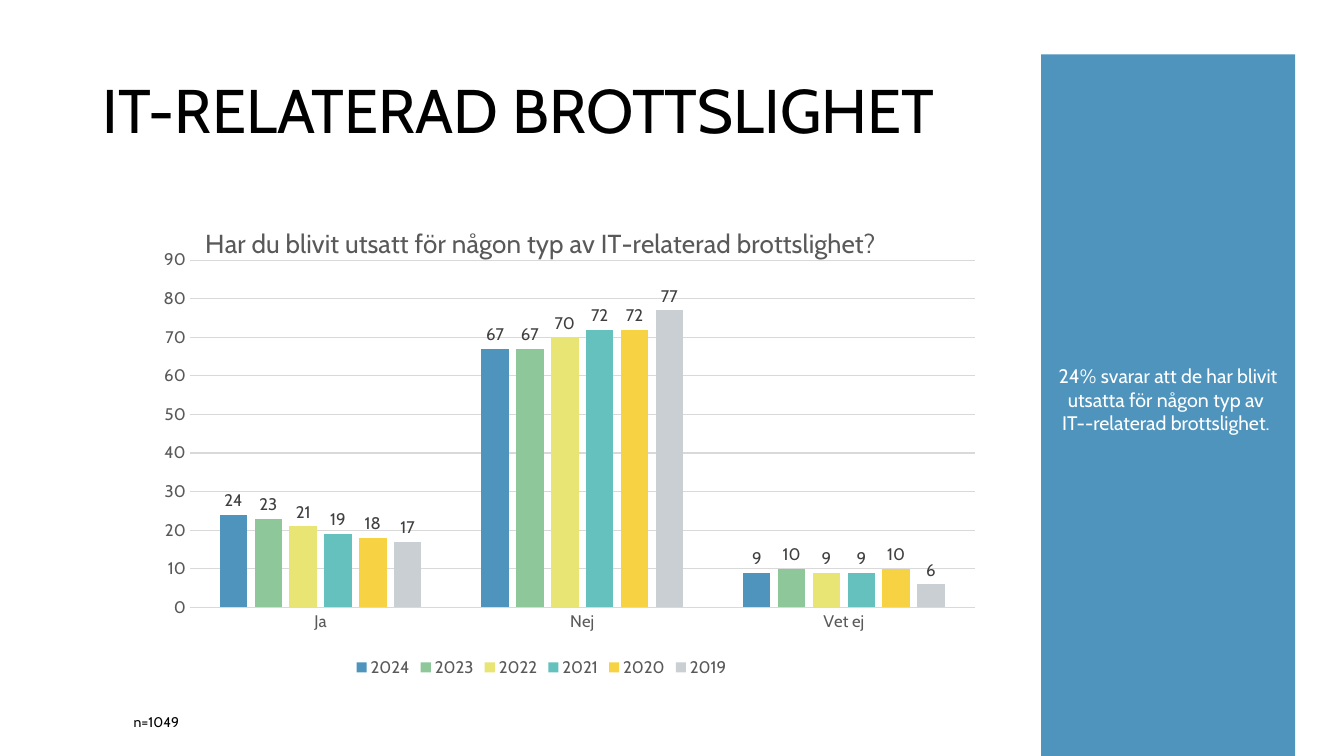
from dataclasses import dataclass

from lxml import etree
from pptx import Presentation
from pptx.chart.data import CategoryChartData
from pptx.dml.color import RGBColor
from pptx.enum.chart import XL_CHART_TYPE, XL_LABEL_POSITION, XL_LEGEND_POSITION, XL_TICK_MARK
from pptx.enum.shapes import MSO_SHAPE
from pptx.enum.text import MSO_ANCHOR, PP_ALIGN
from pptx.oxml.ns import qn
from pptx.util import Cm, Pt

CLUSTERED = XL_CHART_TYPE.COLUMN_CLUSTERED
OUTSIDE_END = XL_LABEL_POSITION.OUTSIDE_END
LEGEND_BOTTOM = XL_LEGEND_POSITION.BOTTOM
NO_TICK = XL_TICK_MARK.NONE
RECTANGLE = MSO_SHAPE.RECTANGLE
MIDDLE = MSO_ANCHOR.MIDDLE
CENTER = PP_ALIGN.CENTER

FONT = "Cabin"
BLACK = RGBColor(0x00, 0x00, 0x00)
WHITE = RGBColor(0xFF, 0xFF, 0xFF)
BLUE = RGBColor(0x4E, 0x94, 0xBD)
GREEN = RGBColor(0x8D, 0xC7, 0x9A)
LIME = RGBColor(0xE8, 0xE5, 0x75)
TEAL = RGBColor(0x65, 0xC1, 0xBE)
YELLOW = RGBColor(0xF7, 0xD2, 0x43)
SILVER = RGBColor(0xCA, 0xCF, 0xD3)
GRID_GREY = RGBColor(0xD9, 0xD9, 0xD9)
AXIS_GREY = RGBColor(0x59, 0x59, 0x59)
LABEL_GREY = RGBColor(0x40, 0x40, 0x40)


@dataclass(frozen=True)
class Box:
    left: float
    top: float
    width: float
    height: float

    def lengths(self) -> tuple:
        return Cm(self.left), Cm(self.top), Cm(self.width), Cm(self.height)


@dataclass(frozen=True)
class SurveyYear:
    year: str
    percentages: tuple[int, ...]
    color: RGBColor


ANSWERS = ("Ja", "Nej", "Vet ej")
SURVEY_YEARS = (
    SurveyYear("2024", (24, 67, 9), BLUE),
    SurveyYear("2023", (23, 67, 10), GREEN),
    SurveyYear("2022", (21, 70, 9), LIME),
    SurveyYear("2021", (19, 72, 9), TEAL),
    SurveyYear("2020", (18, 72, 10), YELLOW),
    SurveyYear("2019", (17, 77, 6), SILVER),
)


def set_font(font, size: float, color: RGBColor) -> None:
    font.name = FONT
    font.size = Pt(size)
    font.bold = False
    font.color.rgb = color


def add_text(slide, box: Box, text: str, size: float):
    frame = slide.shapes.add_textbox(*box.lengths()).text_frame
    frame.word_wrap = True
    frame.text = text
    set_font(frame.paragraphs[0].font, size, BLACK)
    return frame


def set_layout(parent, index: int, **values) -> None:
    """Give a chart part a manual layout in fractions of the chart."""
    for old in parent.findall(qn("c:layout")):
        parent.remove(old)
    layout = etree.Element(qn("c:layout"))
    manual = etree.SubElement(layout, qn("c:manualLayout"))
    for name, value in values.items():
        etree.SubElement(manual, qn(f"c:{name}")).set("val", str(value))
    parent.insert(index, layout)


def style_axis(axis) -> None:
    axis.major_tick_mark = NO_TICK
    axis.minor_tick_mark = NO_TICK
    set_font(axis.tick_labels.font, 12, AXIS_GREY)


def add_survey_chart(slide, box: Box) -> None:
    data = CategoryChartData()
    data.categories = ANSWERS
    for survey in SURVEY_YEARS:
        data.add_series(survey.year, survey.percentages)
    chart = slide.shapes.add_chart(CLUSTERED, *box.lengths(), data).chart
    set_font(chart.font, 10, BLACK)

    chart.has_title = True
    question = chart.chart_title.text_frame
    question.text = "Har du blivit utsatt för någon typ av IT-relaterad brottslighet?"
    set_font(question.paragraphs[0].font, 18.6, AXIS_GREY)

    chart.has_legend = True
    chart.legend.position = LEGEND_BOTTOM
    chart.legend.include_in_layout = False
    set_font(chart.legend.font, 12, AXIS_GREY)

    style_axis(chart.category_axis)
    answer_line = chart.category_axis.format.line
    answer_line.color.rgb = GRID_GREY
    answer_line.width = Pt(0.75)

    percent_axis = chart.value_axis
    style_axis(percent_axis)
    percent_axis.minimum_scale = 0
    percent_axis.maximum_scale = 90
    percent_axis.major_unit = 10
    percent_axis.format.line.fill.background()
    grid_line = percent_axis.major_gridlines.format.line
    grid_line.color.rgb = GRID_GREY
    grid_line.width = Pt(0.75)

    plot = chart.plots[0]
    plot.vary_by_categories = False
    plot.gap_width = 219
    plot.overlap = -27
    for series, survey in zip(plot.series, SURVEY_YEARS):
        series.format.fill.solid()
        series.format.fill.fore_color.rgb = survey.color
        labels = series.data_labels
        labels.show_value = True
        labels.position = OUTSIDE_END
        set_font(labels.font, 12, LABEL_GREY)

    chart_root = chart._chartSpace.find(qn("c:chart"))
    set_layout(chart_root.find(qn("c:title")), 1, xMode="edge", yMode="edge", x=0.12, y=0.04)
    set_layout(chart_root.find(qn("c:plotArea")), 0, layoutTarget="inner", xMode="edge",
               yMode="edge", x=0.108, y=0.122, w=0.875, h=0.724)


def add_summary_panel(slide, box: Box) -> None:
    panel = slide.shapes.add_shape(RECTANGLE, *box.lengths())
    panel.shadow.inherit = False
    panel.fill.solid()
    panel.fill.fore_color.rgb = BLUE
    panel.line.fill.background()
    frame = panel.text_frame
    frame.word_wrap = True
    frame.vertical_anchor = MIDDLE
    frame.margin_bottom = Cm(0.72)
    frame.text = ("24% svarar att de har blivit utsatta för någon typ av \v"
                  "IT--relaterad brottslighet. ")
    summary = frame.paragraphs[0]
    summary.alignment = CENTER
    set_font(summary.font, 14, WHITE)


def main() -> None:
    deck = Presentation()
    deck.slide_width = Cm(33.87)
    deck.slide_height = Cm(19.05)
    slide = deck.slides.add_slide(deck.slide_layouts[6])

    heading = add_text(slide, Box(2.34, 1.02, 29.21, 3.68), "IT-RELATERAD BROTTSLIGHET", 44)
    heading.vertical_anchor = MIDDLE
    heading.paragraphs[0].line_spacing = 0.9
    add_survey_chart(slide, Box(2.34, 5.08, 22.61, 12.09))
    add_text(slide, Box(3.12, 17.86, 22.6, 0.69), "n=1049", 10)
    add_summary_panel(slide, Box(26.24, 1.37, 6.4, 17.98))

    deck.save("out.pptx")


if __name__ == "__main__":
    main()
